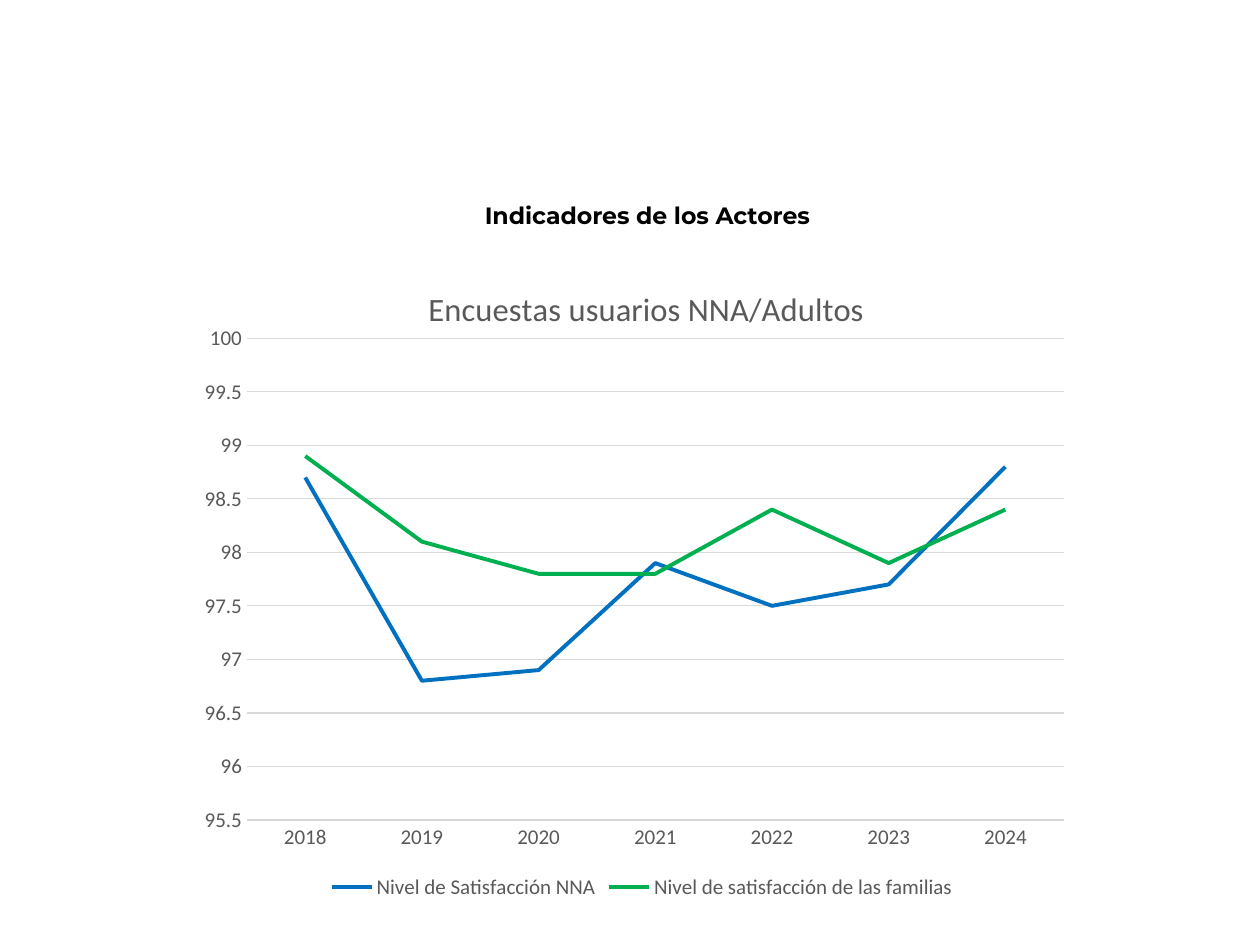
from lxml.etree import SubElement
from pptx import Presentation
from pptx.chart.data import CategoryChartData as ChartData
from pptx.dml.color import RGBColor
from pptx.enum.chart import XL_CHART_TYPE as ChartType
from pptx.enum.chart import XL_LEGEND_POSITION as LegendPosition
from pptx.enum.chart import XL_TICK_MARK as TickMark
from pptx.enum.text import MSO_ANCHOR as Anchor
from pptx.enum.text import PP_ALIGN as Align
from pptx.oxml.ns import qn
from pptx.util import Pt

COLORS = {"title": "000000", "label": "595959", "grid": "D9D9D9",
          "children": "0070C0", "families": "00B050"}
YEARS = [str(year) for year in range(2018, 2025)]
SURVEYS = [
    ("Nivel de Satisfacción NNA", "children",
     (98.7, 96.8, 96.9, 97.9, 97.5, 97.7, 98.8)),
    ("Nivel de satisfacción de las familias", "families",
     (98.9, 98.1, 97.8, 97.8, 98.4, 97.9, 98.4)),
]


def color(key):
    """Return the named colour."""
    return RGBColor.from_string(COLORS[key])


def apply(target, values):
    """Set every attribute in a dict of format values."""
    for attribute, value in values.items():
        setattr(target, attribute, value)


def style_font(font, key, **values):
    """Format a font with a named colour."""
    apply(font, values)
    font.color.rgb = color(key)


def style_line(line, key, width):
    """Format a line with a named colour and a width in points."""
    line.color.rgb = color(key)
    line.width = Pt(width)


def place_part(part, index, **fractions):
    """Give a chart part a manual layout in fractions of the chart."""
    previous = part.find(qn("c:layout"))
    if previous is not None:
        part.remove(previous)
    layout = SubElement(part, qn("c:layout"))
    part.insert(index, layout)
    manual = SubElement(layout, qn("c:manualLayout"))
    if "w" in fractions:
        SubElement(manual, qn("c:layoutTarget")).set("val", "inner")
    for side in ("x", "y"):
        SubElement(manual, qn(f"c:{side}Mode")).set("val", "edge")
    for side, fraction in fractions.items():
        SubElement(manual, qn(f"c:{side}")).set("val", str(fraction))


def add_heading(slide):
    """Move and format the slide title."""
    heading = slide.shapes.title
    apply(heading, {"left": Pt(151), "top": Pt(101),
                    "width": Pt(438), "height": Pt(44)})
    frame = heading.text_frame
    frame.text = "Indicadores de los Actores"
    apply(frame, {"vertical_anchor": Anchor.MIDDLE, "word_wrap": True})
    paragraph = frame.paragraphs[0]
    paragraph.alignment = Align.CENTER
    style_font(paragraph.runs[0].font, "title", name="Montserrat",
               size=Pt(13.5), bold=True)


def style_axes(chart):
    """Format the year axis and the satisfaction axis."""
    years, satisfaction = chart.category_axis, chart.value_axis
    for axis in (years, satisfaction):
        apply(axis, {"major_tick_mark": TickMark.NONE,
                     "minor_tick_mark": TickMark.NONE})
        style_font(axis.tick_labels.font, "label", name="Calibri", size=Pt(12))
    style_line(years.format.line, "grid", 0.75)
    apply(satisfaction, {"minimum_scale": 95.5, "maximum_scale": 100,
                         "major_unit": 0.5, "has_major_gridlines": True})
    style_line(satisfaction.major_gridlines.format.line, "grid", 0.75)
    satisfaction.format.line.fill.background()


def add_survey_chart(slide):
    """Add the line chart of survey results."""
    data = ChartData()
    data.categories = YEARS
    for name, _, values in SURVEYS:
        data.add_series(name, values)
    chart = slide.shapes.add_chart(ChartType.LINE, Pt(116), Pt(145),
                                   Pt(502), Pt(372), data).chart
    style_font(chart.font, "title", name="Calibri", size=Pt(10))
    apply(chart, {"has_title": True, "has_legend": True})

    caption = chart.chart_title.text_frame
    caption.text = "Encuestas usuarios NNA/Adultos"
    style_font(caption.paragraphs[0].runs[0].font, "label", name="Calibri",
               size=Pt(18.6), bold=False)

    apply(chart.legend, {"position": LegendPosition.BOTTOM,
                         "include_in_layout": False})
    style_font(chart.legend.font, "label", name="Calibri", size=Pt(12))

    style_axes(chart)
    chart.plots[0].vary_by_categories = False
    for series, (_, key, _) in zip(chart.plots[0].series, SURVEYS):
        series.smooth = False
        style_line(series.format.line, key, 2.25)

    root = chart.element if hasattr(chart, "element") else chart._chartSpace
    place_part(root.find(".//" + qn("c:plotArea")), 0,
               x=0.05, y=0.13, w=0.93, h=0.74)
    place_part(root.find(".//" + qn("c:title")), 1, x=0.25, y=0.04)


def main():
    """Build and save the slide."""
    deck = Presentation()
    apply(deck, {"slide_width": Pt(720), "slide_height": Pt(540)})
    slide = deck.slides.add_slide(deck.slide_layouts[5])
    add_heading(slide)
    add_survey_chart(slide)
    deck.save("out.pptx")


if __name__ == "__main__":
    main()
